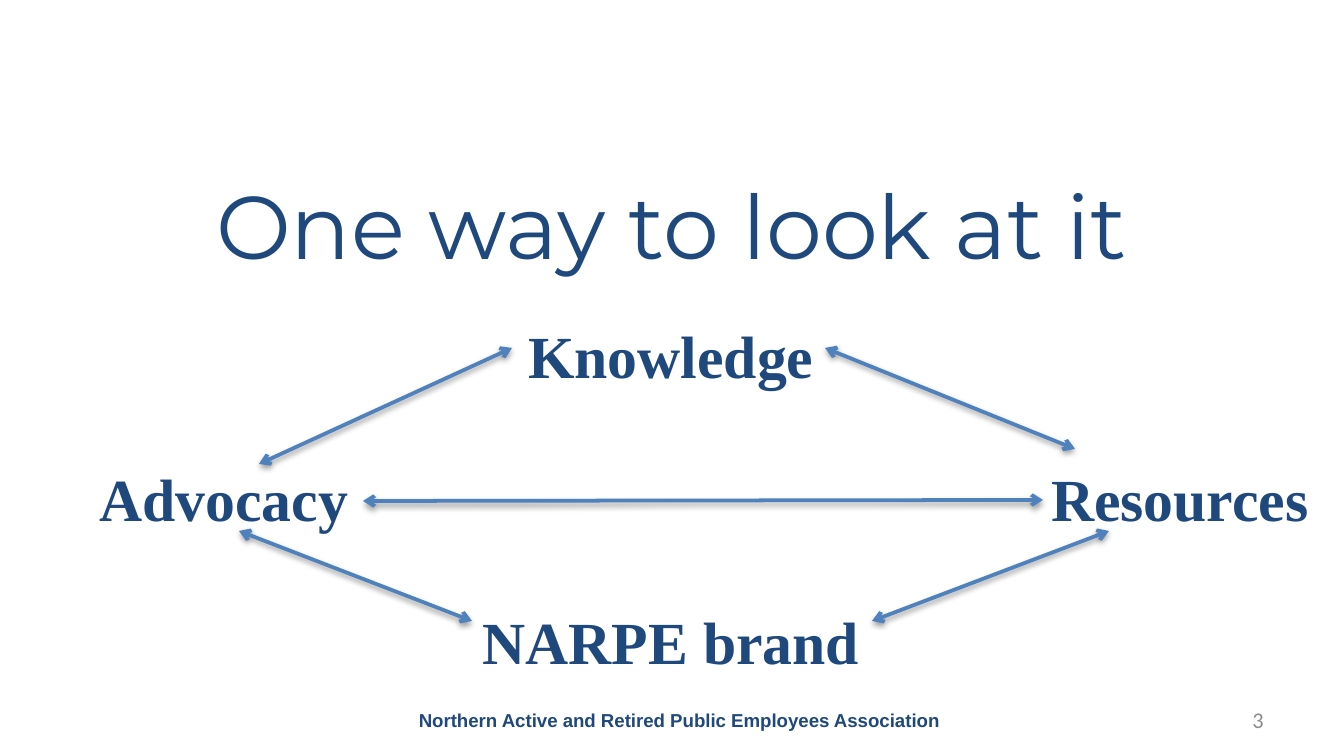
from lxml import etree
from pptx import Presentation
from pptx import util as u
from pptx.dml.color import RGBColor
from pptx.enum import shapes, text
from pptx.oxml.ns import qn

COLORS = {"navy": "1F497D", "line": "4F81BD", "gray": "8C8C8C"}
SCALE = 914400 / 134.4
TITLE = "One way to look at it"
FOOTER = "Northern Active and Retired Public Employees Association"
PAGE = "3"

ROW_TOP, ROW_STEP, ROW_H = 320, 143, 69
LABELS = [
    ("Knowledge", 671, 0, 300),
    ("Advocacy", 224, 1, 260),
    ("Resources", 1180, 1, 264),
    ("NARPE brand", 671, 2, 392),
]
ARROWS = [
    (512, 348, 259, 464),
    (825, 348, 1075, 449),
    (363, 501, 1043, 500),
    (239, 531, 472, 621),
    (1109, 531, 872, 621),
]


def px(n):
    return u.Emu(round(n * SCALE))


def place(sp, x, y, w, h):
    sp.left, sp.top, sp.width, sp.height = px(x), px(y), px(w), px(h)


def write(sp, content, font, size, color, bold=False, align="CENTER"):
    tf = sp.text_frame
    tf.word_wrap = True
    tf.auto_size = text.MSO_AUTO_SIZE.NONE
    tf.vertical_anchor = text.MSO_ANCHOR.MIDDLE
    p = tf.paragraphs[0]
    p.text = content
    p.alignment = getattr(text.PP_ALIGN, align)
    p.font.name, p.font.size, p.font.bold = font, u.Pt(size), bold
    p.font.color.rgb = RGBColor.from_string(COLORS[color])
    return tf


def add_text(s, box, *style):
    sp = s.shapes.add_textbox(*map(px, box))
    return write(sp, *style)


def add_arrow(s, ends):
    c = s.shapes.add_connector(shapes.MSO_CONNECTOR.STRAIGHT, *map(px, ends))
    c.line.width = u.Pt(2)
    c.line.color.rgb = RGBColor.from_string(COLORS["line"])
    ln = c.line._get_or_add_ln()
    for tag in ("a:headEnd", "a:tailEnd"):
        etree.SubElement(ln, qn(tag), type="arrow")


prs = Presentation()
prs.slide_width, prs.slide_height = px(1344), px(756)
s = prs.slides.add_slide(prs.slide_layouts[5])

title = s.shapes.title
place(title, 67, 90, 1210, 242)
tf = write(title, TITLE, "Montserrat", 47.7, "navy")
tf.margin_top, tf.margin_bottom = px(26), 0

add_text(s, (394, 700, 570, 40), FOOTER, "Arial", 10, "navy", True)
add_text(s, (964, 700, 313, 40), PAGE, "Calibri", 12, "gray", False, "RIGHT")

for name, center, row, w in LABELS:
    box = (center - w / 2, ROW_TOP + row * ROW_STEP, w, ROW_H)
    tf = add_text(s, box, name, "Times New Roman", 32, "navy", True)
    tf.margin_left = tf.margin_right = tf.margin_top = tf.margin_bottom = 0

for ends in ARROWS:
    add_arrow(s, ends)

prs.save("out.pptx")
